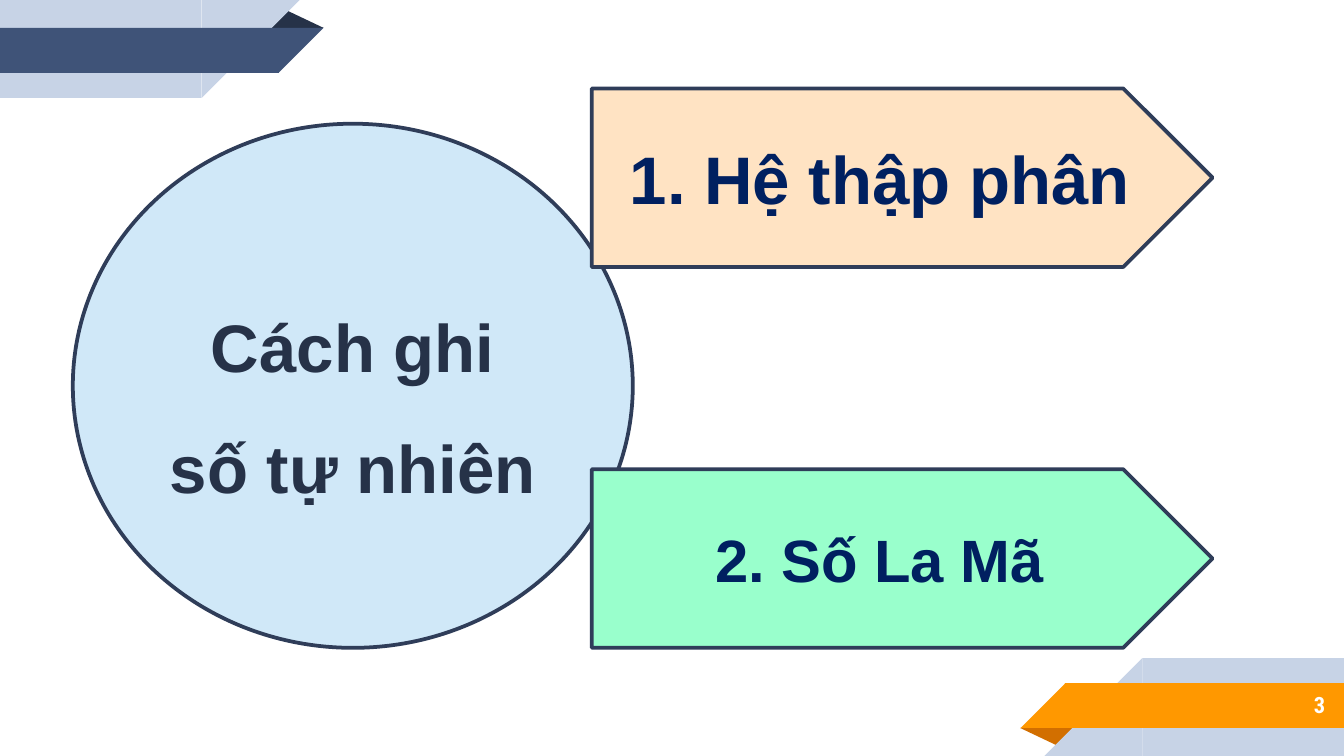
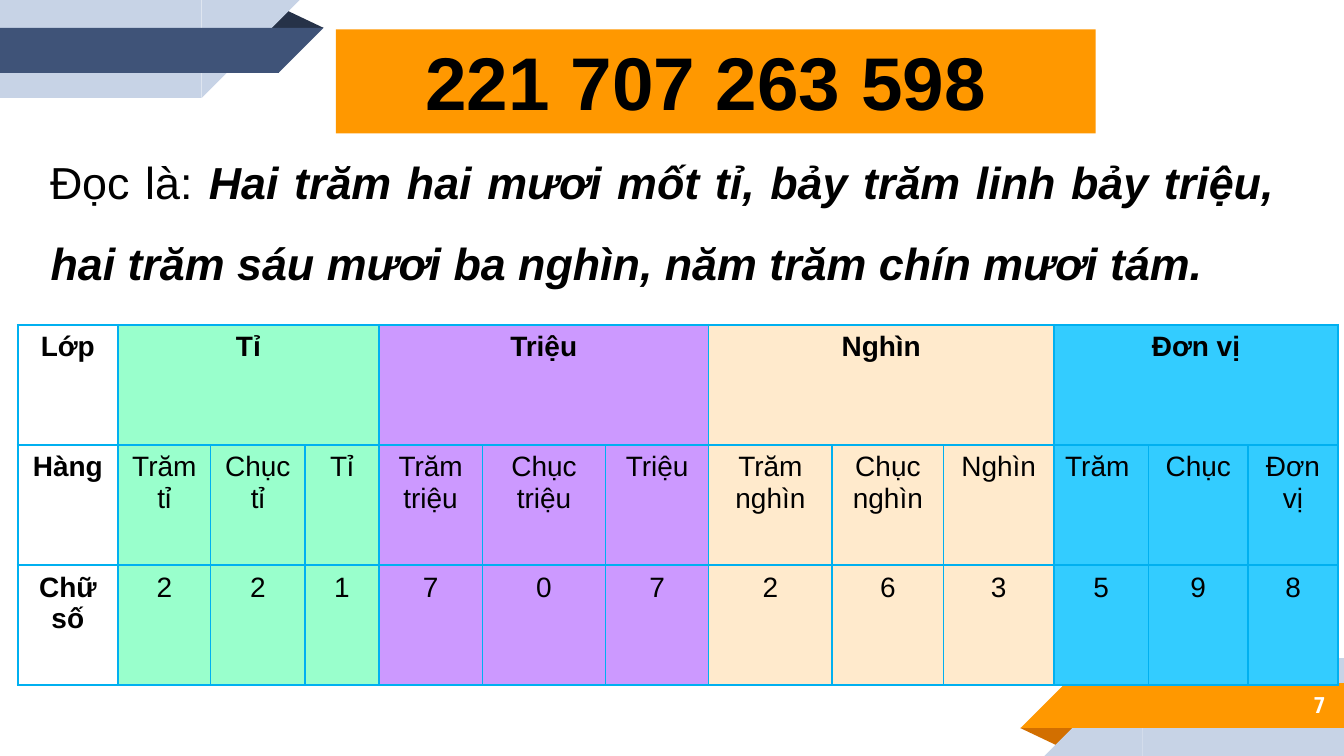
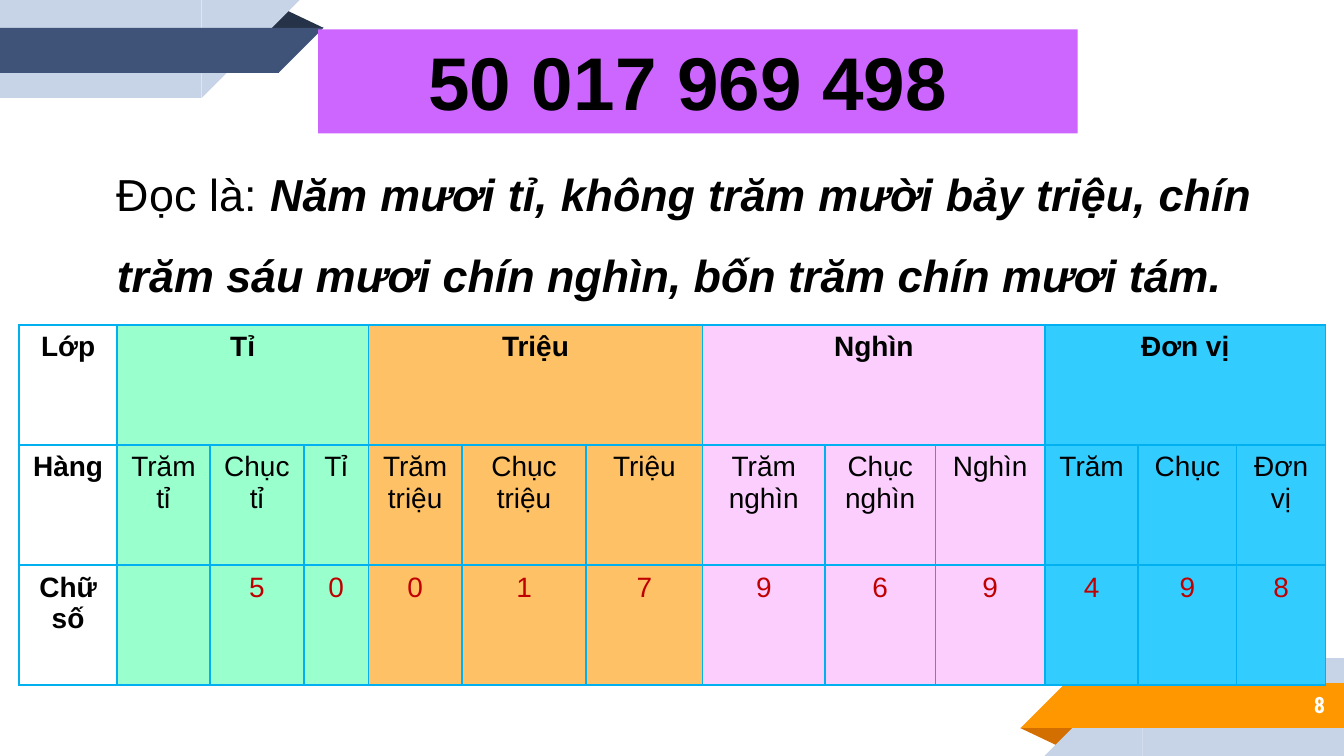
"""Build three lesson slides on writing natural numbers in the decimal system."""
from lxml import etree
from pptx import Presentation
from pptx import util as u
from pptx.dml import color as dml
from pptx.enum import shapes, text
from pptx.oxml import ns

SHAPE = shapes.MSO_SHAPE
ALIGN = text.PP_ALIGN
ANCHOR = text.MSO_ANCHOR
WIDTH, HEIGHT = 720, 405
FONT, NUMBER_FONT = "Arial", "Roboto Condensed"
BLACK, WHITE, RED = "000000", "FFFFFF", "C00000"
SLATE, NAVY, PALE, OUTLINE = "263248", "3F5378", "C7D3E6", "2F3D59"
ORANGE, DARK_ORANGE, TEXT_BLUE = "FF9800", "D26F00", "002060"
MINT, SKY, BORDER = "99FFCC", "33CCFF", "00B0F0"
CLASSES = ["Tỉ", "Triệu", "Nghìn", "Đơn vị"]
PLACES = ["Trăm tỉ", "Chục tỉ", "Tỉ", "Trăm triệu", "Chục triệu", "Triệu",
          "Trăm nghìn", "Chục nghìn", "Nghìn", "Trăm ", "Chục", "Đơn vị"]
ROW_HEIGHTS = [64.4, 64.4, 64.4]


def rgb(value):
    """Turn a hex string into a colour."""
    return dml.RGBColor.from_string(value)


def points(values):
    """Turn numbers into lengths in points."""
    return [u.Pt(value) for value in values]


def add_run(paragraph, words, size, colour=BLACK, bold=False, italic=False, font=FONT):
    """Append one formatted run to a paragraph."""
    run = paragraph.add_run()
    run.text = words
    run.font.name, run.font.size = font, u.Pt(size)
    run.font.bold, run.font.italic = bold, italic
    run.font.color.rgb = rgb(colour)


def prepare_text(shape, align, anchor, spacing=None):
    """Set wrapping and alignment, and return the first paragraph."""
    frame = shape.text_frame
    frame.word_wrap = True
    frame.vertical_anchor = anchor
    paragraph = frame.paragraphs[0]
    paragraph.alignment = align
    if spacing:
        paragraph.line_spacing = spacing
    return paragraph


def add_figure(slide, kind, box, fill, outline=None):
    """Add a flat preset shape with an optional outline."""
    shape = slide.shapes.add_shape(kind, *points(box))
    shape.shadow.inherit = False
    shape.fill.solid()
    shape.fill.fore_color.rgb = rgb(fill)
    if outline:
        shape.line.color.rgb = rgb(outline)
        shape.line.width = u.Pt(2)
    else:
        shape.line.fill.background()
    return shape


def add_ribbon(slide, band, fold, turned=False):
    """Draw the corner ribbon at top left, or turned half round at bottom right."""
    pieces = [
        (SHAPE.ISOSCELES_TRIANGLE, (142.5, 5, 31, 10), fold, 0),
        (SHAPE.RECTANGLE, (0, 0, 108, 52.5), PALE, 0),
        (SHAPE.RIGHT_TRIANGLE, (108, 0, 52.5, 52.5), PALE, 90),
        (SHAPE.RECTANGLE, (0, 15, 149.5, 24), band, 0),
        (SHAPE.RIGHT_TRIANGLE, (149.2, 15, 24, 24), band, 90),
    ]
    for kind, (left, top, width, height), fill, angle in pieces:
        if turned:
            left, top, angle = WIDTH - left - width, HEIGHT - top - height, angle + 180
        shape = add_figure(slide, kind, (left, top, width, height), fill)
        shape.rotation = angle
        if kind == SHAPE.ISOSCELES_TRIANGLE:
            shape.adjustments[0] = 0.32


def add_page(presentation, number):
    """Add a blank slide with both ribbons and its number."""
    slide = presentation.slides.add_slide(presentation.slide_layouts[6])
    add_ribbon(slide, NAVY, SLATE)
    add_ribbon(slide, ORANGE, DARK_ORANGE, turned=True)
    label = slide.shapes.add_textbox(*points((600, 365, 117, 25)))
    frame = label.text_frame
    frame.margin_left = frame.margin_right = frame.margin_top = frame.margin_bottom = u.Pt(7.2)
    paragraph = prepare_text(label, ALIGN.RIGHT, ANCHOR.MIDDLE)
    add_run(paragraph, str(number), 12, WHITE, bold=True, font=NUMBER_FONT)
    return slide


def add_topic(slide, kind, box, fill, words, size, colour, spacing=None):
    """Add an outlined shape with a bold centred topic."""
    shape = add_figure(slide, kind, box, fill, OUTLINE)
    paragraph = prepare_text(shape, ALIGN.CENTER, ANCHOR.MIDDLE, spacing)
    add_run(paragraph, words, size, colour, bold=True)


def add_number_title(slide, left, fill, words):
    """Add the coloured bar that shows the number."""
    bar = add_figure(slide, SHAPE.RECTANGLE, (left, 15.8, 407, 55.7), fill)
    add_run(prepare_text(bar, ALIGN.CENTER, ANCHOR.TOP), words, 40, bold=True)


def add_reading(slide, box, words):
    """Add the sentence that spells the number out."""
    reading = slide.shapes.add_textbox(*points(box))
    paragraph = prepare_text(reading, ALIGN.JUSTIFY, ANCHOR.TOP, 1.5)
    add_run(paragraph, "Đọc là: ", 24)
    add_run(paragraph, words, 24, bold=True, italic=True)


def add_borders(cell):
    """Draw a thin blue line on all four sides of a cell."""
    properties = cell._tc.get_or_add_tcPr()
    for side in ("a:lnL", "a:lnR", "a:lnT", "a:lnB"):
        line = etree.SubElement(properties, ns.qn(side), w=str(u.Pt(1)))
        fill = etree.SubElement(line, ns.qn("a:solidFill"))
        etree.SubElement(fill, ns.qn("a:srgbClr"), val=BORDER)


def fill_cell(cell, words, fill, bold, colour):
    """Give a cell its borders, fill and centred text."""
    add_borders(cell)
    cell.margin_left = cell.margin_right = u.Pt(6)
    if fill:
        cell.fill.solid()
        cell.fill.fore_color.rgb = rgb(fill)
    else:
        cell.fill.background()
    paragraph = cell.text_frame.paragraphs[0]
    paragraph.alignment = ALIGN.CENTER
    if words:
        add_run(paragraph, words, 15, colour, bold)


def add_place_table(slide, left, widths, fills, digits, digit_colour):
    """Add the table of classes, places and digits."""
    box = points((left, 174, sum(widths), sum(ROW_HEIGHTS)))
    table = slide.shapes.add_table(len(ROW_HEIGHTS), len(widths), *box).table
    table.first_row = table.horz_banding = False
    for column, width in zip(table.columns, widths):
        column.width = u.Pt(width)
    for row, height in zip(table.rows, ROW_HEIGHTS):
        row.height = u.Pt(height)
    class_row = ["Lớp"]
    for name in CLASSES:
        class_row += [name, "", ""]
    rows = [class_row, ["Hàng", *PLACES], ["Chữ số", *digits]]
    for r, row in enumerate(rows):
        for c, words in enumerate(row):
            fill = fills[(c - 1) // 3] if c else None
            colour = digit_colour if r == 2 and c else BLACK
            fill_cell(table.cell(r, c), words, fill, r == 0 or c == 0, colour)
    for first in range(1, len(widths), 3):
        table.cell(0, first).merge(table.cell(0, first + 2))


def main():
    """Build and save the presentation."""
    presentation = Presentation()
    presentation.slide_width, presentation.slide_height = points((WIDTH, HEIGHT))

    slide = add_page(presentation, 3)
    add_topic(slide, SHAPE.OVAL, (39, 66.3, 300, 280.8), "D0E8F8",
              "Cách ghi số tự nhiên", 36, SLATE, 1.5)
    add_topic(slide, SHAPE.PENTAGON, (317, 47.4, 332.6, 95.6), "FFE3C3",
              "1. Hệ thập phân", 36, TEXT_BLUE)
    add_topic(slide, SHAPE.PENTAGON, (317, 251.4, 332.6, 95.6), MINT,
              "2. Số La Mã", 32, TEXT_BLUE)

    slide = add_page(presentation, 7)
    add_number_title(slide, 180, ORANGE, "221 707 263 598 ")
    add_reading(slide, (20, 65, 669.6, 94.3),
                "Hai trăm hai mươi mốt tỉ, bảy trăm linh bảy triệu, "
                "hai trăm sáu mươi ba nghìn, năm trăm chín mươi tám. ")
    add_place_table(slide, 9.5,
                    [53.7, 49.7, 50.5, 39.6, 55.5, 66, 55.2, 66.2, 59.7, 59.1, 50.7, 53.3, 48.3],
                    [MINT, "CC99FF", "FFEACC", SKY], "221707263598", BLACK)

    slide = add_page(presentation, 8)
    add_number_title(slide, 170.4, "CC66FF", "50 017 969 498 ")
    add_reading(slide, (55.5, 71.3, 622, 94.3),
                "Năm mươi tỉ, không trăm mười bảy triệu, chín trăm "
                "sáu mươi chín nghìn, bốn trăm chín mươi tám. ")
    add_place_table(slide, 10.3,
                    [52.4, 49.8, 50.3, 34.6, 50.2, 66.5, 62.5, 65.5, 59.2, 58.7, 50, 52.7, 47.7],
                    [MINT, "FFC166", "FBCEFE", SKY], ["", *"50017969498"], RED)

    presentation.save("out.pptx")


if __name__ == "__main__":
    main()
